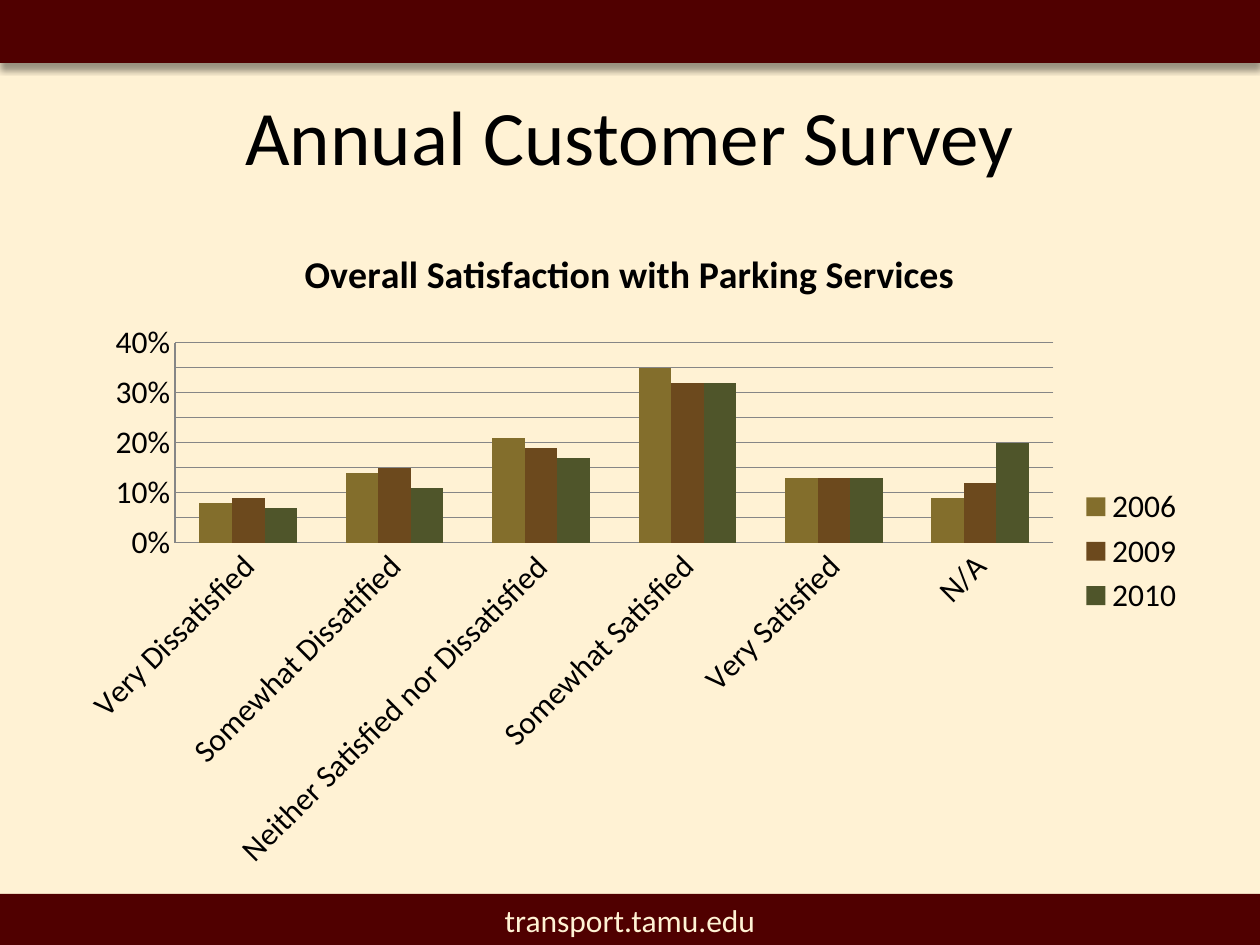
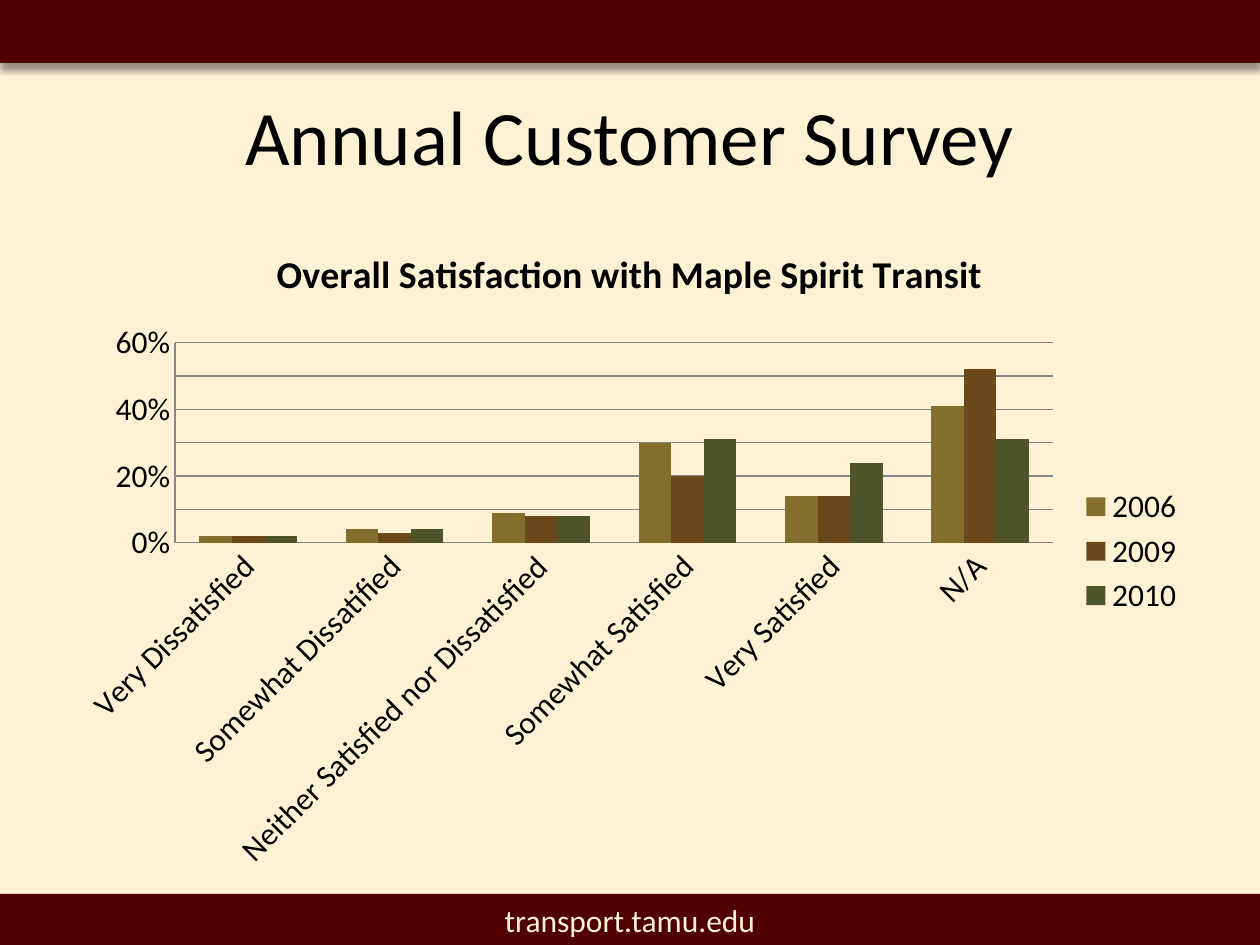
from lxml import etree
from pptx import Presentation
from pptx import util as u
from pptx.chart.data import CategoryChartData
from pptx.dml.color import RGBColor
from pptx.enum import chart as ch, shapes, text
from pptx.oxml import ns

WIDTH, HEIGHT = u.Inches(10), u.Inches(7.5)
FONT = "Calibri"
COLORS = {"cream": "FFF2D4", "maroon": "500000", "ink": "000000", "grid": "868686",
          "2006": "836E2C", "2009": "6C491D", "2010": "4F552A"}
RATINGS = ["Very Dissatisfied", "Somewhat Dissatified",
           "Neither Satisfied nor Dissatisfied",
           "Somewhat Satisfied", "Very Satisfied", "N/A"]
# chart title, top of the value axis, grid step, shares by year
SURVEYS = [
    ("Overall Satisfaction with Parking Services", 0.4, 0.05, {
        "2006": [0.08, 0.14, 0.21, 0.35, 0.13, 0.09],
        "2009": [0.09, 0.15, 0.19, 0.32, 0.13, 0.12],
        "2010": [0.07, 0.11, 0.17, 0.32, 0.13, 0.2]}),
    ("Overall Satisfaction with Maple Spirit Transit", 0.6, 0.1, {
        "2006": [0.02, 0.04, 0.09, 0.3, 0.14, 0.41],
        "2009": [0.02, 0.03, 0.08, 0.2, 0.14, 0.52],
        "2010": [0.02, 0.04, 0.08, 0.31, 0.24, 0.31]}),
]


def color(name):
    return RGBColor.from_string(COLORS[name])


def place(left, top, width, height):
    """Turn shares of the slide into lengths."""
    return [int(share * side) for share, side in
            zip((left, top, width, height), (WIDTH, HEIGHT) * 2)]


def style(font, size, hue="ink", bold=False):
    font.name, font.size, font.bold = FONT, u.Pt(size), bold
    font.color.rgb = color(hue)


def write(shape, words, size, hue):
    frame = shape.text_frame
    frame.word_wrap = True
    frame.vertical_anchor = text.MSO_ANCHOR.MIDDLE
    line = frame.paragraphs[0]
    line.text, line.alignment = words, text.PP_ALIGN.CENTER
    style(line.font, size, hue)


def add_band(slide, top, height):
    band = slide.shapes.add_shape(shapes.MSO_SHAPE.RECTANGLE,
                                  *place(0, top, 1, height))
    band.shadow.inherit = False
    band.fill.solid()
    band.fill.fore_color.rgb = color("maroon")
    band.line.fill.background()
    return band


def cast_shadow(shape):
    effects = shape._element.spPr.find(ns.qn("a:effectLst"))
    outer = etree.SubElement(effects, ns.qn("a:outerShdw"), blurRad=str(u.Pt(4)),
                             dist=str(u.Pt(3)), dir="5400000", rotWithShape="0")
    hue = etree.SubElement(outer, ns.qn("a:srgbClr"), val=COLORS["ink"])
    etree.SubElement(hue, ns.qn("a:alpha"), val="40000")


def add_frame(slide):
    """Add the bands, footer and title that every slide has."""
    cast_shadow(add_band(slide, 0, 1 / 15))
    write(add_band(slide, 0.946, 0.054), "transport.tamu.edu", 18, "cream")
    title = slide.shapes.add_textbox(*place(0.05, 0.077, 0.9, 0.13))
    write(title, "Annual Customer Survey", 44, "ink")


def style_axis(axis):
    axis.major_tick_mark = axis.minor_tick_mark = ch.XL_TICK_MARK.NONE
    axis.format.line.color.rgb = color("grid")
    axis.format.line.width = u.Pt(0.75)
    style(axis.tick_labels.font, 18)


def add_survey(slide, title, top, step, years):
    data = CategoryChartData(number_format="0%")
    data.categories = RATINGS
    for year, shares in years.items():
        data.add_series(year, shares)
    chart = slide.shapes.add_chart(ch.XL_CHART_TYPE.COLUMN_CLUSTERED,
                                   *place(0.05, 7 / 30, 0.9, 0.7), data).chart
    style(chart.font, 18)
    heading = chart.chart_title.text_frame.paragraphs[0]
    heading.text = title
    style(heading.font, 21.6, bold=True)
    chart.chart_title.include_in_layout = False

    chart.has_legend = True
    chart.legend.position = ch.XL_LEGEND_POSITION.RIGHT
    chart.legend.include_in_layout = False
    style(chart.legend.font, 18)

    plot = chart.plots[0]
    plot.gap_width, plot.overlap, plot.vary_by_categories = 150, 0, False
    for series in plot.series:
        series.format.fill.solid()
        series.format.fill.fore_color.rgb = color(series.name)

    scale = chart.value_axis
    style_axis(chart.category_axis)
    style_axis(scale)
    scale.minimum_scale, scale.maximum_scale, scale.major_unit = 0, top, step
    scale.tick_labels.number_format = "0%"
    scale.tick_labels.number_format_is_linked = False
    scale.major_gridlines.format.line.color.rgb = color("grid")
    scale.major_gridlines.format.line.width = u.Pt(0.75)


def main():
    deck = Presentation()
    deck.slide_width, deck.slide_height = WIDTH, HEIGHT
    back = deck.slide_master.background.fill
    back.solid()
    back.fore_color.rgb = color("cream")
    for survey in SURVEYS:
        slide = deck.slides.add_slide(deck.slide_layouts[6])
        add_frame(slide)
        add_survey(slide, *survey)
    deck.save("out.pptx")


if __name__ == "__main__":
    main()
